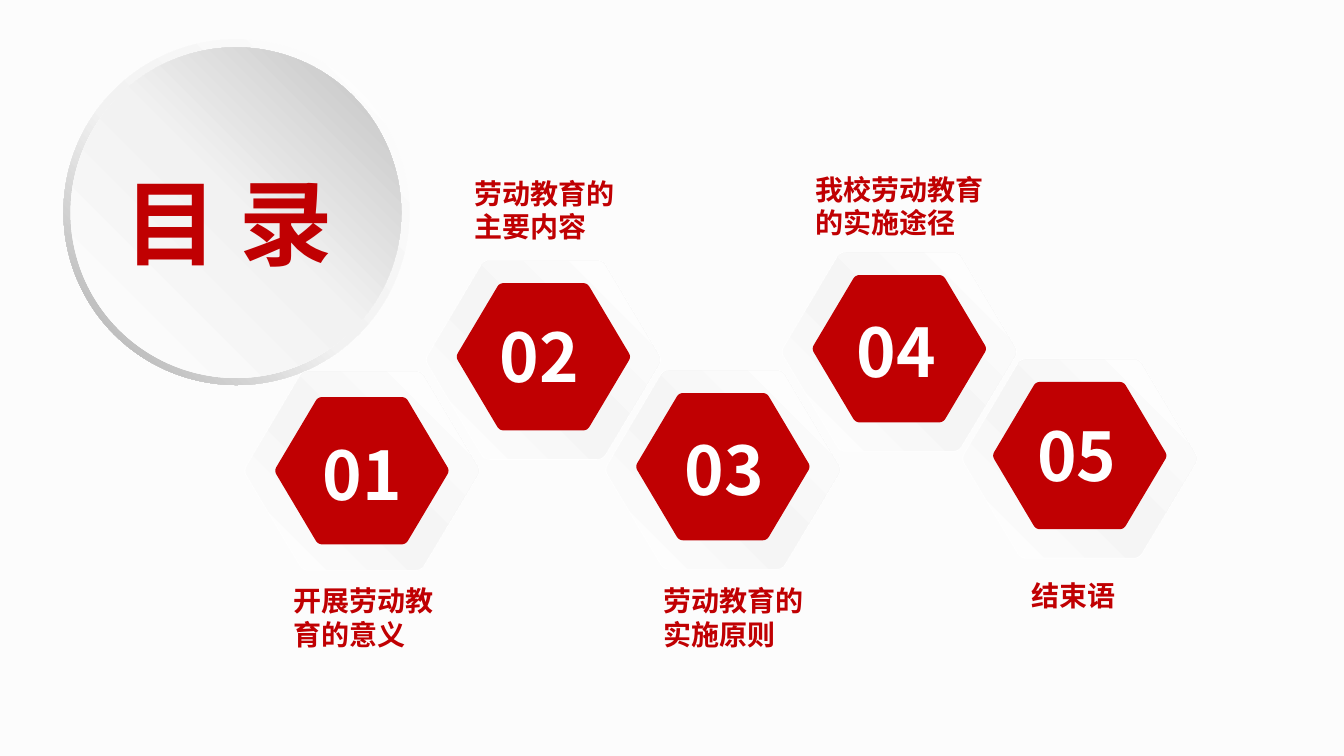
import copy
import math

import lxml.etree
import pptx
import pptx.dml.color
import pptx.enum.shapes
import pptx.enum.text
import pptx.oxml.ns
import pptx.util

PX = 9144  # EMU per px, 100 px to the inch
THEME = {
    "font": "Noto Sans CJK SC",
    "background": "FCFCFC",
    "red": "C00002",
    "white": "FFFFFF",
    "ring": (135, [(0, "FFFFFF"), (55, "F2F2F2"), (100, "A6A6A6")]),
    "disc": (315, [(0, "FFFFFF"), (51, "F2F2F2"), (100, "BFBFBF")]),
    "halo": (315, [(0, "FFFFFF"), (47, "F5F5F5"), (100, "FFFFFF")]),
    "title_size": 66.7,
    "number_size": 48,
    "label_size": 20,
}


def paint(sp, fill):
    """Fill with one colour, or with (clockwise angle, three stops); no line or shadow."""
    sp.shadow.inherit = False
    sp.line.fill.background()
    if isinstance(fill, str):
        sp.fill.solid()
        sp.fill.fore_color.rgb = pptx.dml.color.RGBColor.from_string(fill)
        return
    angle, stops = fill
    sp.fill.gradient()
    sp.fill.gradient_angle = 360 - angle
    gs_list = sp._element.spPr.find(".//" + pptx.oxml.ns.qn("a:gsLst"))
    gs_list.insert(1, copy.deepcopy(gs_list[0]))
    for stop, (percent, color) in zip(sp.fill.gradient_stops, stops):
        stop.position = percent / 100
        stop.color.rgb = pptx.dml.color.RGBColor.from_string(color)


def add_text(shapes, text, *, box, size, color, inset=(10, 5)):
    sp = shapes.add_textbox(*(v * PX for v in box))
    tf = sp.text_frame
    tf.word_wrap = True
    tf.auto_size = pptx.enum.text.MSO_AUTO_SIZE.SHAPE_TO_FIT_TEXT
    tf.margin_left = tf.margin_right = inset[0] * PX
    tf.margin_top = tf.margin_bottom = inset[1] * PX
    r = tf.paragraphs[0].add_run()
    r.text = text
    r.font.name = THEME["font"]
    r.font.size = pptx.util.Pt(size)
    r.font.bold = True
    r.font.color.rgb = pptx.dml.color.RGBColor.from_string(color)
    ea = lxml.etree.SubElement(r._r.get_or_add_rPr(), pptx.oxml.ns.qn("a:ea"))
    ea.set("typeface", THEME["font"])


prs = pptx.Presentation()
prs.slide_width = 1333 * PX
prs.slide_height = 750 * PX
s = prs.slides.add_slide(prs.slide_layouts[6])
s.background.fill.solid()
s.background.fill.fore_color.rgb = pptx.dml.color.RGBColor.from_string(THEME["background"])

# Title medallion
medallion = s.shapes.add_group_shape()
ring = medallion.shapes.add_shape(
    pptx.enum.shapes.MSO_SHAPE.DONUT, 63 * PX, 39 * PX, 343 * PX, 343 * PX)
ring.adjustments[0] = 0.049
paint(ring, THEME["ring"])
disc = medallion.shapes.add_shape(
    pptx.enum.shapes.MSO_SHAPE.OVAL, 70 * PX, 47 * PX, 328 * PX, 328 * PX)
paint(disc, THEME["disc"])
add_text(s.shapes, "目 录", box=(114, 159, 241, 122),
         size=THEME["title_size"], color=THEME["red"])

# Hexagon outline on a unit radius, each corner rounded by a quadratic curve
HALF_HEIGHT = 0.84
ROUNDING = 0.05
CURVE_STEPS = 6
corners = [(math.cos(math.radians(60 * k)),
            HALF_HEIGHT * math.sin(math.radians(60 * k)) / math.sin(math.radians(60)))
           for k in range(6)]
outline = []
for k, (x, y) in enumerate(corners):
    (x0, y0), (x1, y1) = corners[k - 1], corners[(k + 1) % 6]
    for step in range(CURVE_STEPS + 1):
        t = step / CURVE_STEPS
        back, ahead = ROUNDING * (1 - t) ** 2, ROUNDING * t ** 2
        outline.append((x + back * (x0 - x) + ahead * (x1 - x),
                        y + back * (y0 - y) + ahead * (y1 - y)))

# Chapters: text, hexagon centre x and y, core y, number box, label box, label inset
chapters = [
    ("开展劳动教育的意义", 359, 467, 467, (310, 425, 113, 91), (281, 574, 170, 77), (10, 5)),
    ("劳动教育的主要内容", 539, 357, 354, (486, 308, 119, 91), (461, 170, 159, 81), (10, 5)),
    ("劳动教育的实施原则", 717, 466, 463, (669, 420, 124, 91), (648, 574, 166, 77), (10, 5)),
    ("我校劳动教育的实施途径", 892, 349, 346, (840, 303, 116, 91), (799, 166, 188, 77), (10, 5)),
    ("结束语", 1071, 455, 452, (1019, 406, 116, 91), (1023, 574, 96, 34), (0, 0)),
]
for number, (label, x, y, core_y, number_box, label_box, inset) in enumerate(chapters, 1):
    badge = s.shapes.add_group_shape()
    layers = [(118, y, THEME["white"]), (117, y, THEME["halo"]), (87, core_y, THEME["red"])]
    for radius, center_y, fill in layers:
        points = [((x + radius * u) * PX, (center_y + radius * v) * PX) for u, v in outline]
        builder = badge.shapes.build_freeform(*points[0])
        builder.add_line_segments(points[1:], close=True)
        paint(builder.convert_to_shape(), fill)
    add_text(badge.shapes, f"{number:02d}", box=number_box,
             size=THEME["number_size"], color=THEME["white"])
    add_text(s.shapes, label, box=label_box, inset=inset,
             size=THEME["label_size"], color=THEME["red"])

prs.save("out.pptx")
